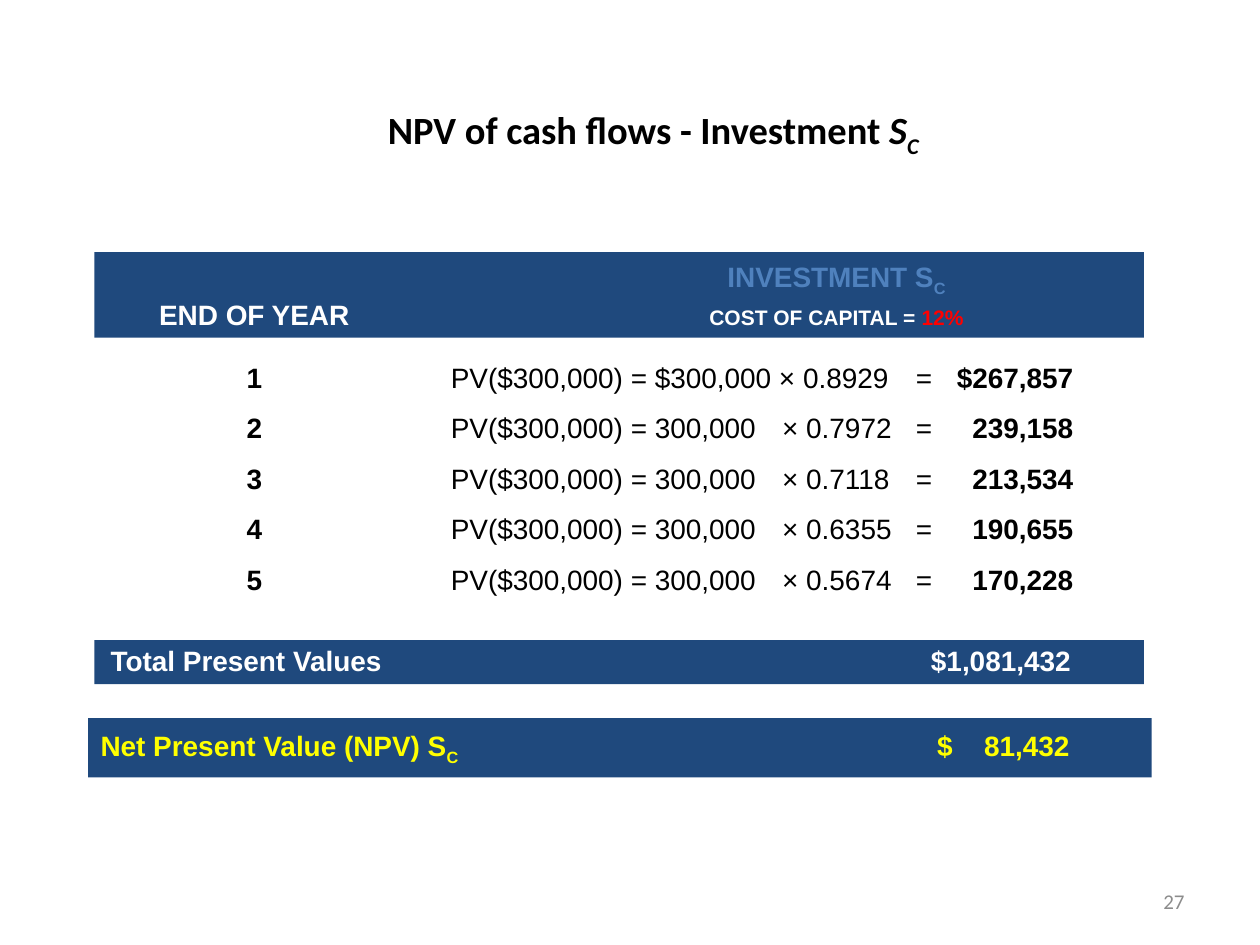
"""Build the slide on the net present value of Investment S_C."""
from lxml import etree
from pptx import Presentation
from pptx.dml.color import RGBColor
from pptx.enum import shapes, text
from pptx.oxml import ns
from pptx.util import Inches, Pt

BLACK = RGBColor(0, 0, 0)
WHITE = RGBColor(255, 255, 255)
NAVY = RGBColor(0x1F, 0x49, 0x7D)
BLUE = RGBColor(0x4F, 0x81, 0xBD)
RED = RGBColor(255, 0, 0)
YELLOW = RGBColor(255, 255, 0)
GRAY = RGBColor(0x8C, 0x8C, 0x8C)

SUB = {"baseline": -25}
HEADING = {"font": "Calibri", "size": 22, "color": BLACK}
TITLE = [[
    ("NPV of cash flows - Investment ", HEADING),
    ("S", {**HEADING, "italic": True}),
    ("C", {**HEADING, "italic": True, **SUB}),
]]
PAGE = [[("27", {"font": "Calibri", "size": 12, "color": GRAY, "bold": False})]]
HEADER = [
    [("\t\tINVESTMENT S", {"color": BLUE}), ("C", {"color": BLUE, **SUB})],
    [("\tEND OF YEAR\t", {}), ("COST OF CAPITAL = ", {"size": 12}),
     ("12%", {"size": 12, "color": RED})],
]
CASH_FLOWS = [
    ("$300,000 ", "0.8929", "$267,857"),
    ("300,000\t", "0.7972", "239,158"),
    ("300,000\t", "0.7118", "213,534"),
    ("300,000\t", "0.6355", "190,655"),
    ("300,000\t", "0.5674", "170,228"),
]
TOTAL = [[("\tTotal Present Values\t$1,081,432", {})]]
NPV = [[
    ("Net Present Value (NPV) S", {"color": YELLOW}),
    ("C", {"color": YELLOW, **SUB}),
    ("\t$\t81,432", {"color": YELLOW}),
]]

HEADER_TABS = [(1.5, "ctr"), (6.12, "ctr")]
FLOW_TABS = [(1.69, "ctr"), (3.25, "l"), (5.88, "l"), (6.94, "l"), (8.19, "r")]
TOTAL_TABS = [(0.55, "l"), (8.17, "r")]
NPV_TABS = [(6.64, "l"), (7.69, "r")]


def write(frame, paragraphs, tabs=(), align=text.PP_ALIGN.LEFT,
          anchor=text.MSO_ANCHOR.TOP, spacing=1.0):
    """Fill a text frame run by run, with shared tab stops."""
    frame.word_wrap = True
    frame.vertical_anchor = anchor
    for index, runs in enumerate(paragraphs):
        line = frame.add_paragraph() if index else frame.paragraphs[0]
        line.alignment = align
        line.line_spacing = spacing
        if tabs:
            stops = etree.SubElement(line._p.get_or_add_pPr(), ns.qn("a:tabLst"))
            for position, side in tabs:
                etree.SubElement(stops, ns.qn("a:tab"),
                                 pos=str(Inches(position)), algn=side)
        for words, style in runs:
            run = line.add_run()
            run.text = words
            run.font.name = style.get("font", "Arial")
            run.font.size = Pt(style.get("size", 16))
            run.font.bold = style.get("bold", True)
            run.font.italic = style.get("italic", False)
            run.font.color.rgb = style.get("color", WHITE)
            if "baseline" in style:
                run.font._element.set("baseline", str(style["baseline"] * 1000))


def add_text(slide, box, paragraphs, **layout):
    """Add a text box."""
    label = slide.shapes.add_textbox(*map(Inches, box))
    write(label.text_frame, paragraphs, **layout)


def add_band(slide, box):
    """Add a navy band and return it."""
    band = slide.shapes.add_shape(shapes.MSO_SHAPE.RECTANGLE, *map(Inches, box))
    band.shadow.inherit = False
    band.fill.solid()
    band.fill.fore_color.rgb = NAVY
    band.line.fill.background()
    return band


def main():
    """Lay out the slide and save it."""
    deck = Presentation()
    deck.slide_width, deck.slide_height = Inches(10), Inches(7.5)
    slide = deck.slides.add_slide(deck.slide_layouts[6])
    middle = text.MSO_ANCHOR.MIDDLE

    add_text(slide, (0.72, 0.73, 8.93, 0.64), TITLE,
             align=text.PP_ALIGN.CENTER, anchor=middle)
    add_text(slide, (7.17, 6.95, 2.33, 0.4), PAGE,
             align=text.PP_ALIGN.RIGHT, anchor=middle)

    add_band(slide, (0.75, 2, 8.33, 0.68))
    add_text(slide, (0.42, 2.01, 9.25, 0.64), HEADER, tabs=HEADER_TABS)

    bold, plain = {"color": BLACK}, {"color": BLACK, "bold": False}
    flows = [
        [(f"\t{year}\t", bold),
         (f"PV($300,000) = {amount}× {factor}\t=", plain),
         (f"\t{value}", bold)]
        for year, (amount, factor, value) in enumerate(CASH_FLOWS, 1)
    ]
    add_text(slide, (0.23, 2.68, 9.43, 2.11), flows, tabs=FLOW_TABS, spacing=1.5)

    add_band(slide, (0.75, 5.08, 8.33, 0.35))
    add_text(slide, (0.23, 5.06, 9.1, 0.37), TOTAL, tabs=TOTAL_TABS)

    npv = add_band(slide, (0.7, 5.7, 8.44, 0.47))
    write(npv.text_frame, NPV, tabs=NPV_TABS, anchor=middle)

    deck.save("out.pptx")


if __name__ == "__main__":
    main()
